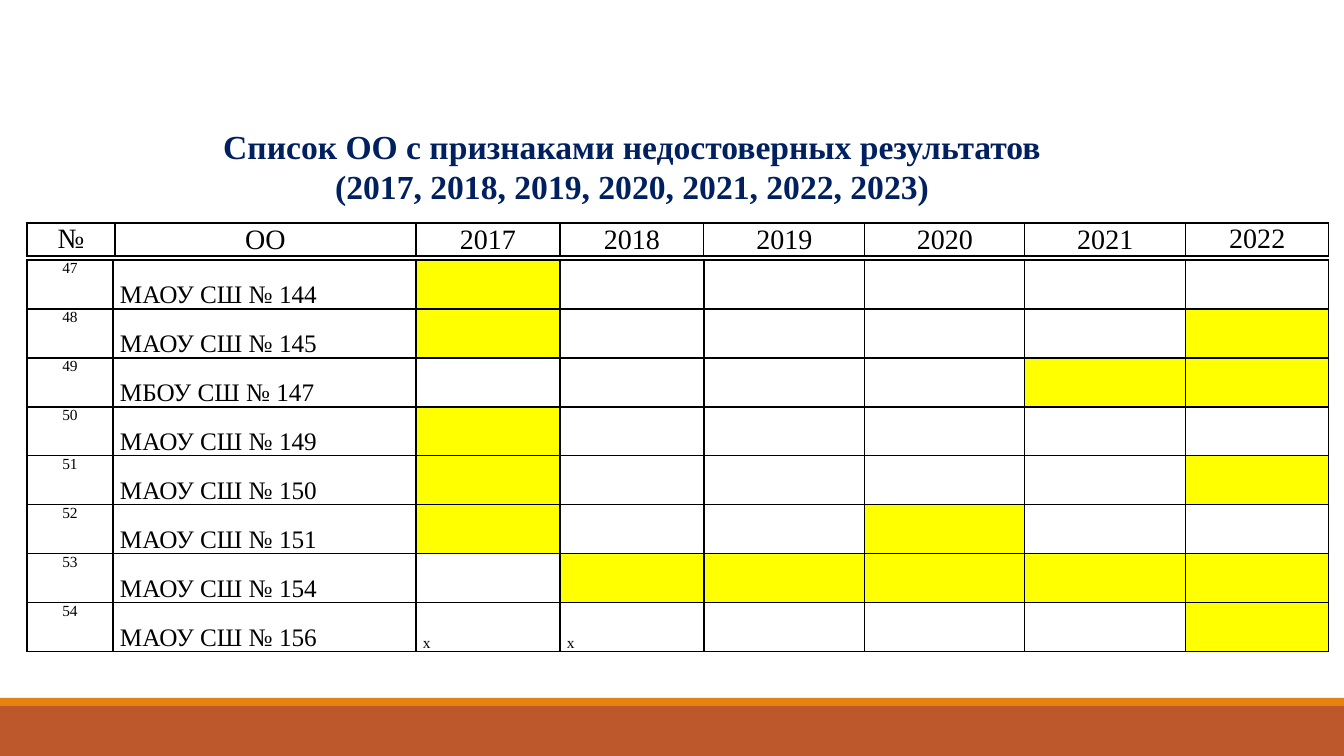
import pptx
import pptx.dml.color
import pptx.enum.shapes
import pptx.enum.text
import pptx.oxml
import pptx.oxml.ns
import pptx.util

# Content
TITLE = [
    "Список ОО с признаками недостоверных результатов",
    "(2017, 2018, 2019, 2020, 2021, 2022, 2023)",
]
HEADER = ["№", "ОО", "2017", "2018", "2019", "2020", "2021", "2022"]
FIRST_NUMBER = 47
SCHOOLS = [  # name, flagged years, years marked with х
    ("МАОУ СШ № 144", ["2017"], []),
    ("МАОУ СШ № 145", ["2017", "2022"], []),
    ("МБОУ СШ № 147", ["2021", "2022"], []),
    ("МАОУ СШ № 149", ["2017"], []),
    ("МАОУ СШ № 150", ["2017", "2022"], []),
    ("МАОУ СШ № 151", ["2017", "2020"], []),
    ("МАОУ СШ № 154", ["2018", "2019", "2020", "2021", "2022"], []),
    ("МАОУ СШ № 156", ["2022"], ["2017", "2018"]),
]

# Layout in px
SLIDE_W, SLIDE_H = 1344, 756
TITLE_BOX = (211, 121, 842, 92)
BARS = [((0, 706, SLIDE_W, 50), "BD582C"), ((0, 698, SLIDE_W, 8), "E48312")]
TABLE_X, HEADER_Y, HEADER_H, BODY_Y, ROW_H = 27, 223, 33, 260, 49
YEAR_COLS = [144, 144, 161, 160, 161, 143]
HEADER_COLS = [88, 301] + YEAR_COLS
BODY_COLS = [86, 303] + YEAR_COLS
CELL_PAD = 7

FONT = "Times New Roman"
BLACK, WHITE, YELLOW, NAVY = "000000", "FFFFFF", "FFFF00", "002060"
LEFT, CENTER = pptx.enum.text.PP_ALIGN.LEFT, pptx.enum.text.PP_ALIGN.CENTER
TOP, BOTTOM = pptx.enum.text.MSO_ANCHOR.TOP, pptx.enum.text.MSO_ANCHOR.BOTTOM


def px(n):
    return pptx.util.Emu(round(n * 914400 / 100.8))


def rgb(value):
    return pptx.dml.color.RGBColor.from_string(value)


def set_attrs(obj, values):
    for name, value in values.items():
        setattr(obj, name, value)


def write(p, text, size, color=BLACK, bold=False, align=CENTER):
    p.alignment = align
    r = p.add_run()
    r.text = text
    set_attrs(r.font, {"name": FONT, "size": pptx.util.Pt(size), "bold": bold})
    r.font.color.rgb = rgb(color)


def add_borders(cell):
    tc_pr = cell._tc.get_or_add_tcPr()
    for i, side in enumerate("LRTB"):
        tc_pr.insert(i, pptx.oxml.parse_xml(
            f'<a:ln{side} {pptx.oxml.ns.nsdecls("a")} w="12700"><a:solidFill>'
            f'<a:srgbClr val="{BLACK}"/></a:solidFill></a:ln{side}>'))


def add_table(slide, y, row_h, cols, rows):
    """Each cell is (text, size, align, anchor, fill)."""
    tbl = slide.shapes.add_table(len(rows), len(cols), px(TABLE_X), px(y),
                                 px(sum(cols)), px(row_h * len(rows))).table
    set_attrs(tbl, {"first_row": False, "horz_banding": False})
    for col, width in zip(tbl.columns, cols):
        col.width = px(width)
    for row, cells in zip(tbl.rows, rows):
        row.height = px(row_h)
        for cell, (text, size, align, anchor, fill) in zip(row.cells, cells):
            set_attrs(cell, {"margin_left": px(CELL_PAD), "margin_right": px(CELL_PAD),
                             "margin_top": 0, "margin_bottom": 0,
                             "vertical_anchor": anchor})
            cell.fill.solid()
            cell.fill.fore_color.rgb = rgb(fill)
            add_borders(cell)
            if text:
                write(cell.text_frame.paragraphs[0], text, size, align=align)


def main():
    prs = pptx.Presentation()
    set_attrs(prs, {"slide_width": px(SLIDE_W), "slide_height": px(SLIDE_H)})
    slide = prs.slides.add_slide(prs.slide_layouts[5])

    # Bottom bars
    for box, color in BARS:
        sp = slide.shapes.add_shape(pptx.enum.shapes.MSO_SHAPE.RECTANGLE, *map(px, box))
        sp.shadow.inherit = False
        sp.fill.solid()
        sp.fill.fore_color.rgb = rgb(color)
        sp.line.fill.background()

    # Title
    title = slide.shapes.title
    set_attrs(title, dict(zip(("left", "top", "width", "height"), map(px, TITLE_BOX))))
    tf = title.text_frame
    set_attrs(tf, {"word_wrap": True, "vertical_anchor": TOP,
                   "auto_size": pptx.enum.text.MSO_AUTO_SIZE.NONE})
    for i, line in enumerate(TITLE):
        p = tf.add_paragraph() if i else tf.paragraphs[0]
        write(p, line, 24, NAVY, bold=True)

    # School rows
    years = HEADER[2:]
    body = []
    for number, (name, flagged, marked) in enumerate(SCHOOLS, FIRST_NUMBER):
        body.append([(str(number), 11, CENTER, TOP, WHITE),
                     (name, 18, LEFT, BOTTOM, WHITE)]
                    + [("х" if year in marked else "", 11, LEFT, BOTTOM,
                        YELLOW if year in flagged else WHITE) for year in years])
    add_table(slide, BODY_Y, ROW_H, BODY_COLS, body)

    # Header row: the outer cells sit at the top
    header = [(text, 20, CENTER, TOP if text in (HEADER[0], HEADER[-1]) else BOTTOM, WHITE)
              for text in HEADER]
    add_table(slide, HEADER_Y, HEADER_H, HEADER_COLS, [header])

    prs.save("out.pptx")


if __name__ == "__main__":
    main()
